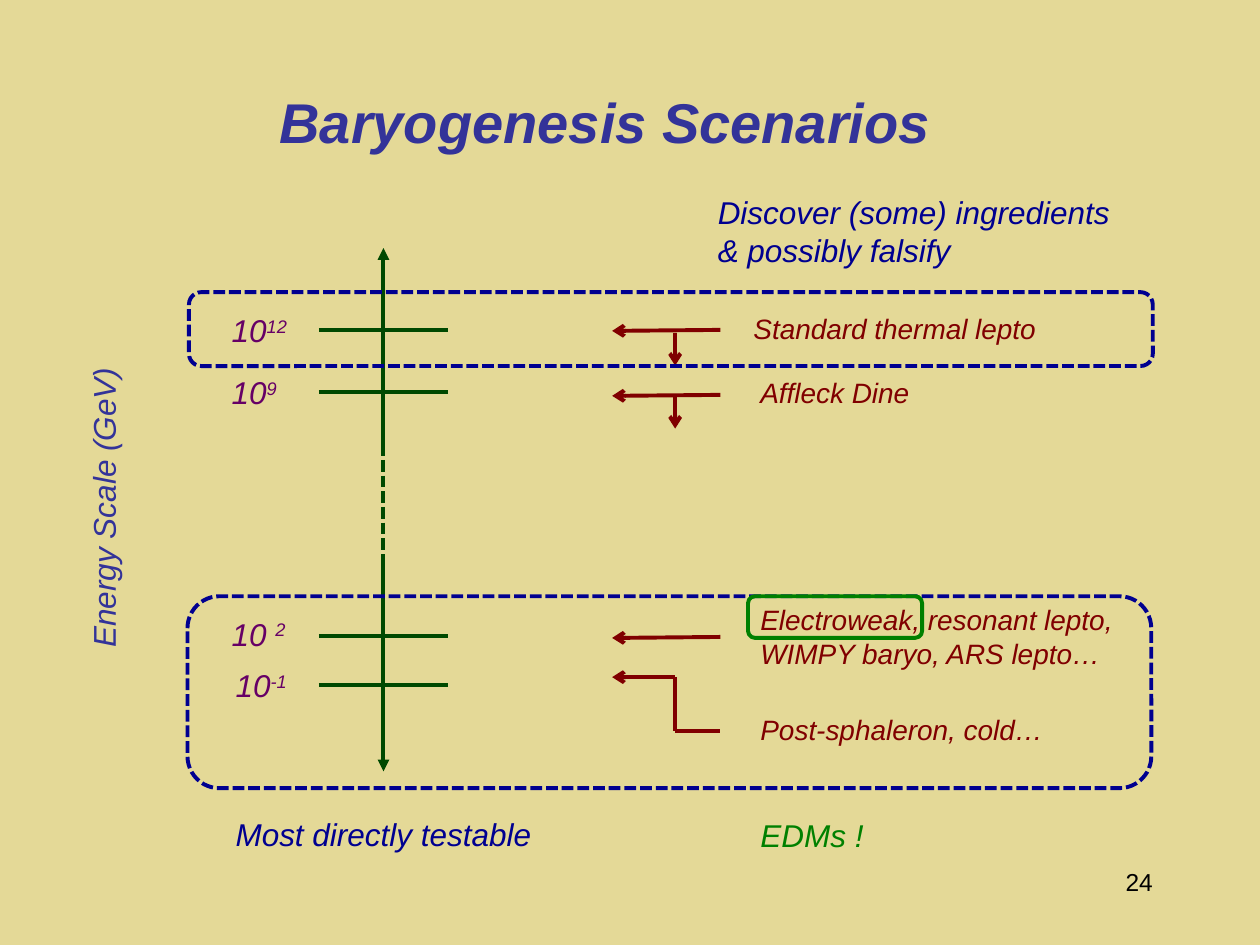
from lxml.etree import SubElement
from pptx import Presentation
from pptx.dml.color import RGBColor
from pptx.enum.dml import MSO_LINE
from pptx.enum.shapes import MSO_CONNECTOR, MSO_SHAPE
from pptx.enum.text import MSO_ANCHOR, PP_ALIGN
from pptx.oxml.ns import qn
from pptx.util import Cm, Pt

SAND, INDIGO, NAVY = "E4D997", "333399", "000090"
FOREST, GREEN, MAROON, PURPLE = "004900", "008000", "800000", "660066"


def rgb(color):
    return RGBColor.from_string(color)


def box_cm(*lengths):
    return [Cm(v) for v in lengths]


class Diagram:
    font = "Arial"
    weight = Pt(2.25)

    def __init__(self, s):
        self.s = s

    def style(self, p, size, color, italic=True, bold=False):
        f = p.font
        f.name, f.size, f.italic, f.bold = self.font, Pt(size), italic, bold
        f.color.rgb = rgb(color)

    def title(self, text, box, size, color):
        sp = self.s.shapes.title
        sp.left, sp.top, sp.width, sp.height = box_cm(*box)
        tf = sp.text_frame
        tf.text = text
        tf.vertical_anchor = MSO_ANCHOR.MIDDLE
        p = tf.paragraphs[0]
        p.alignment = PP_ALIGN.LEFT
        self.style(p, size, color, bold=True)

    def text(self, text, box, size, color, italic=True,
             align=PP_ALIGN.LEFT, rotation=0):
        """Add a text box; whatever follows a ^ is raised."""
        sp = self.s.shapes.add_textbox(*box_cm(*box))
        sp.rotation = rotation
        tf = sp.text_frame
        tf.word_wrap = True
        p = tf.paragraphs[0]
        p.alignment = align
        self.style(p, size, color, italic)
        base, _, power = text.partition("^")
        p.add_run().text = base
        if power:
            r = p.add_run()
            r.text = power
            r._r.get_or_add_rPr().set("baseline", "30000")

    def line(self, start, end, color, head=None, tail=None, dash=None):
        c = self.s.shapes.add_connector(
            MSO_CONNECTOR.STRAIGHT, *box_cm(*start, *end))
        c.line.color.rgb = rgb(color)
        c.line.width = self.weight
        if dash:
            c.line.dash_style = dash
        ln = c.line._get_or_add_ln()
        for tag, kind in (("a:headEnd", head), ("a:tailEnd", tail)):
            if kind:
                SubElement(ln, qn(tag), type=kind)
        SubElement(c._element.spPr, qn("a:effectLst"))

    def frame(self, box, color, dash=None):
        sp = self.s.shapes.add_shape(MSO_SHAPE.ROUNDED_RECTANGLE, *box_cm(*box))
        sp.shadow.inherit = False
        sp.fill.background()
        sp.line.color.rgb = rgb(color)
        sp.line.width = self.weight
        if dash:
            sp.line.dash_style = dash

    def mask(self, box, color):
        sp = self.s.shapes.add_shape(MSO_SHAPE.RECTANGLE, *box_cm(*box))
        sp.shadow.inherit = False
        sp.fill.solid()
        sp.fill.fore_color.rgb = rgb(color)
        sp.line.fill.background()


def main():
    prs = Presentation()
    prs.slide_width, prs.slide_height = box_cm(25.4, 19.05)
    s = prs.slides.add_slide(prs.slide_layouts[5])
    s.background.fill.solid()
    s.background.fill.fore_color.rgb = rgb(SAND)
    d = Diagram(s)
    dash = MSO_LINE.SQUARE_DOT

    d.title("Baryogenesis Scenarios", (5.38, 0.86, 15.19, 3.18), 32, INDIGO)
    d.text("Energy Scale (GeV)", (-1.24, 9.47, 6.65, 1.02), 18, INDIGO,
           rotation=270)

    # Broken energy axis with its levels
    axis_x = 7.73
    d.line((axis_x, 5), (axis_x, 15.55), FOREST, "triangle", "triangle")
    d.mask((7.14, 9.17, 1.35, 2.24), SAND)
    d.line((axis_x, 8.64), (axis_x, 11.4), FOREST, dash=dash)
    for label, x, y, tick_y in (
        ("10^12", 4.42, 6.15, 6.65),
        ("10^9", 4.42, 7.4, 7.9),
        ("10 ^2", 4.42, 12.27, 12.83),
        ("10^-1", 4.5, 13.31, 13.81),
    ):
        d.line((6.43, tick_y), (9.04, tick_y), FOREST)
        d.text(label, (x, y, 2, 1.02), 18, PURPLE)

    # Arrows from the scenarios to their scales
    tip_x, bend_x, tail_x = 12.34, 13.61, 14.52
    for y in (6.65, 7.96, 12.84):
        d.line((tail_x, y), (tip_x, y + 0.02), MAROON, tail="arrow")
    for y in (6.71, 7.98):
        d.line((bend_x, y), (bend_x, y + 0.66), MAROON, tail="arrow")
    d.line((bend_x, 13.65), (tip_x, 13.65), MAROON, tail="arrow")
    d.line((bend_x, 13.65), (bend_x, 14.74), MAROON)
    d.line((bend_x, 14.74), (tail_x, 14.74), MAROON)

    for scenario, box in (
        ("Standard thermal lepto", (14.94, 6.15, 8.56, 0.94)),
        ("Affleck Dine", (15.08, 7.44, 5.31, 0.94)),
        ("Electroweak, resonant lepto, WIMPY baryo, ARS lepto…",
         (15.08, 12.03, 8.56, 1.63)),
        ("Post-sphaleron, cold…", (15.08, 14.23, 7.19, 0.94)),
    ):
        d.text(scenario, box, 16, MAROON)

    # Testability groups
    d.frame((3.78, 12.02, 19.43, 3.87), NAVY, dash)
    d.text("Most directly testable", (4.5, 16.31, 7.67, 1.02), 18, NAVY)
    d.frame((3.81, 5.89, 19.43, 1.49), NAVY, dash)
    d.text("Discover (some) ingredients & possibly falsify",
           (14.22, 3.77, 8.64, 1.8), 18, NAVY)
    d.frame((15.08, 12.02, 3.51, 0.84), GREEN)
    d.text("EDMs !", (15.08, 16.33, 3.99, 1.02), 18, GREEN)

    d.text("24", (18.21, 17.35, 5.28, 1.27), 14, "000000", italic=False,
           align=PP_ALIGN.RIGHT)
    prs.save("out.pptx")


if __name__ == "__main__":
    main()
